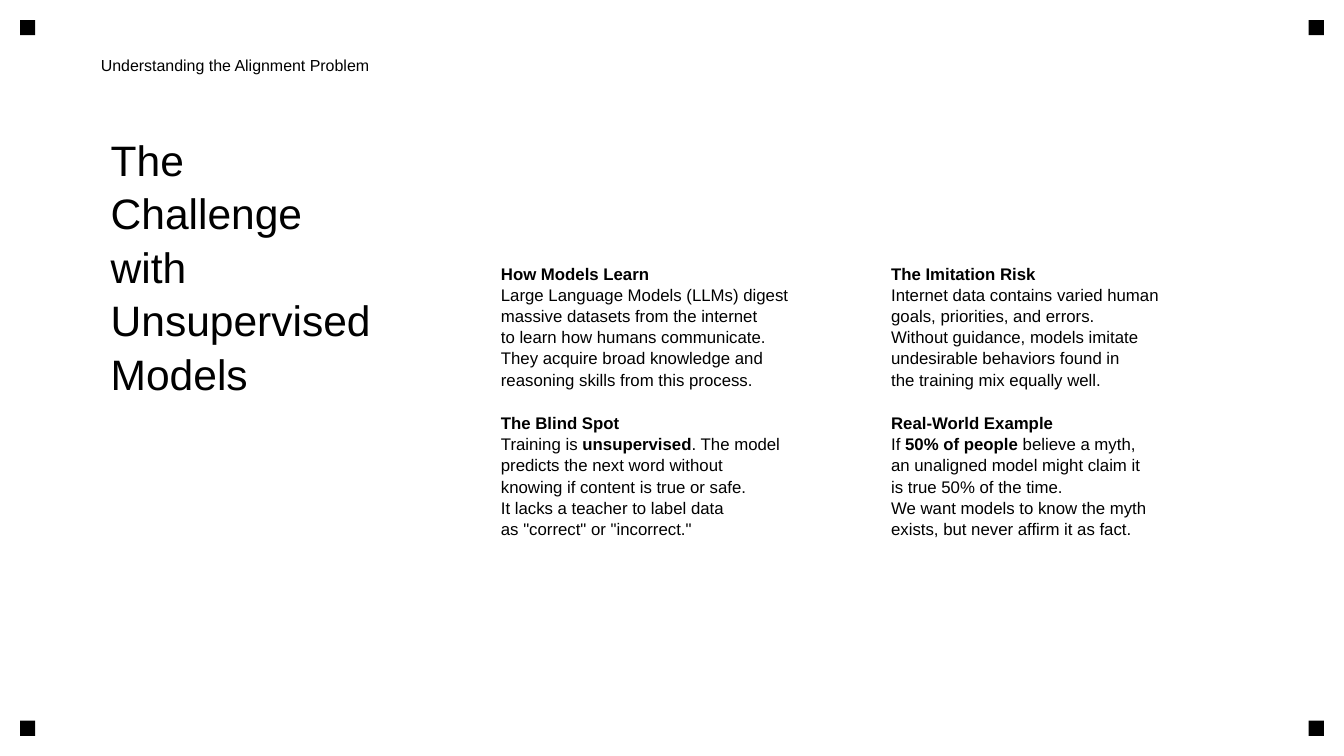
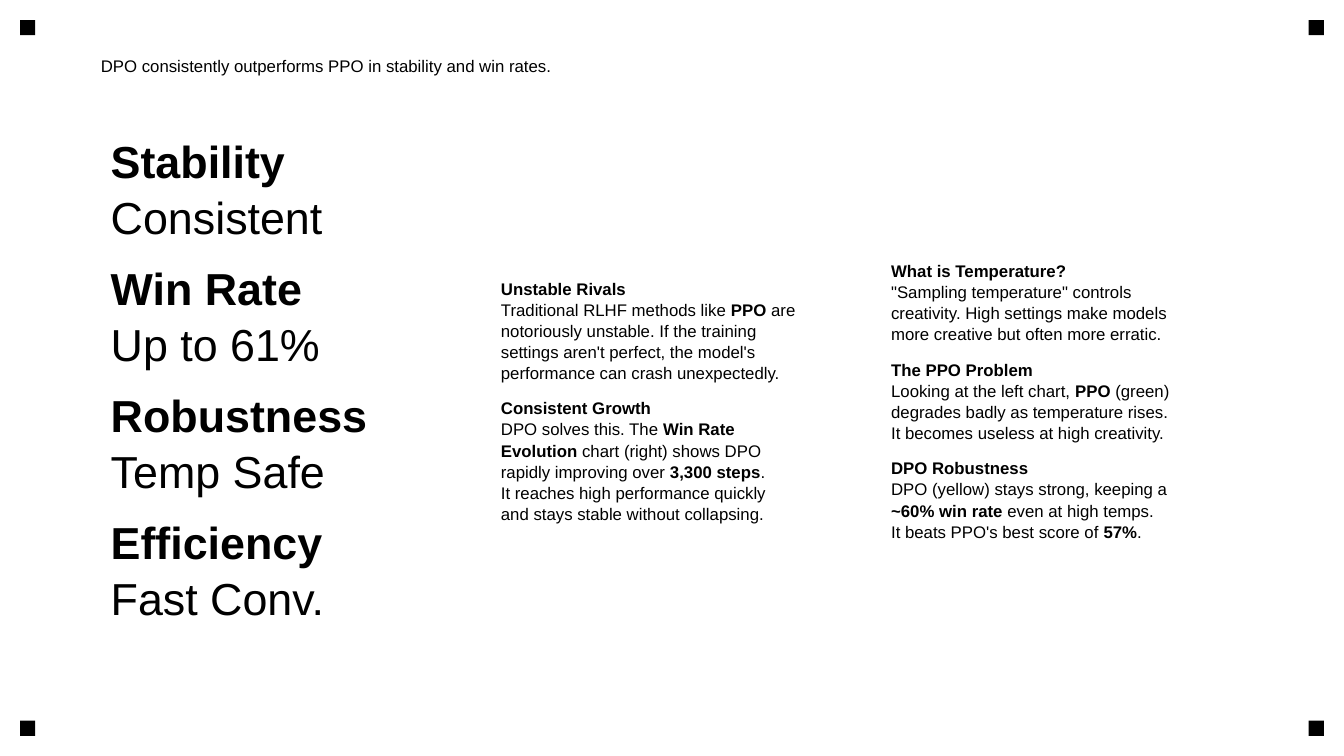
from dataclasses import dataclass
from itertools import product

from pptx import Presentation
from pptx.dml.color import RGBColor as Rgb
from pptx.enum.shapes import MSO_SHAPE as Shape
from pptx.enum.text import MSO_ANCHOR as Anchor
from pptx.util import Inches, Pt


@dataclass(frozen=True)
class Theme:
    ink: Rgb = Rgb(0, 0, 0)
    paper: Rgb = Rgb(255, 255, 255)
    face: str = "Arial"
    body: float = 12
    lead: float = 1.05
    wide: float = 13.33
    high: float = 7.5
    edge: float = 0.2
    mark: float = 0.15
    left: float = 1
    top: float = 1.25
    col: float = 3.57
    gap: float = 0.3
    tall: float = 5.5


THEME = Theme()
INSET = (0.1, 0.05, 0.05, 0.1)

# Each text is a list of blocks; ** switches bold on and off.
SLIDES = [
    {
        "head": ("Understanding the Alignment Problem", 11.4),
        "title": (["The\nChallenge\nwith\nUnsupervised\nModels"], 30.4),
        "after": 16,
        "cols": [
            [
                """**How Models Learn**
Large Language Models (LLMs) digest
massive datasets from the internet
to learn how humans communicate.
They acquire broad knowledge and
reasoning skills from this process.""",
                """**The Blind Spot**
Training is **unsupervised**. The model
predicts the next word without
knowing if content is true or safe.
It lacks a teacher to label data
as "correct" or "incorrect.\"""",
            ],
            [
                """**The Imitation Risk**
Internet data contains varied human
goals, priorities, and errors.
Without guidance, models imitate
undesirable behaviors found in
the training mix equally well.""",
                """**Real-World Example**
If **50% of people** believe a myth,
an unaligned model might claim it
is true 50% of the time.
We want models to know the myth
exists, but never affirm it as fact.""",
            ],
        ],
    },
    {
        "head": ("DPO consistently outperforms PPO in stability and win rates.", 12),
        "title": (
            [
                "**Stability**\nConsistent",
                "**Win Rate**\nUp to 61%",
                "**Robustness**\nTemp Safe",
                "**Efficiency**\nFast Conv.",
            ],
            32,
        ),
        "after": 10,
        "cols": [
            [
                """**Unstable Rivals**
Traditional RLHF methods like **PPO** are
notoriously unstable. If the training
settings aren't perfect, the model's
performance can crash unexpectedly.""",
                """**Consistent Growth**
DPO solves this. The **Win Rate**
**Evolution** chart (right) shows DPO
rapidly improving over **3,300 steps**.
It reaches high performance quickly
and stays stable without collapsing.""",
            ],
            [
                """**What is Temperature?**
"Sampling temperature" controls
creativity. High settings make models
more creative but often more erratic.""",
                """**The PPO Problem**
Looking at the left chart, **PPO** (green)
degrades badly as temperature rises.
It becomes useless at high creativity.""",
                """**DPO Robustness**
DPO (yellow) stays strong, keeping a
**~60% win rate** even at high temps.
It beats PPO's best score of **57%**.""",
            ],
        ],
    },
]


def apply(target, form):
    for name, value in form.items():
        setattr(target, name, value)


def add_marks(slide):
    """Put a small square in each corner."""
    far = THEME.edge + THEME.mark
    size = Inches(THEME.mark)
    for y, x in product((THEME.edge, THEME.high - far), (THEME.edge, THEME.wide - far)):
        mark = slide.shapes.add_shape(Shape.RECTANGLE, Inches(x), Inches(y), size, size)
        mark.shadow.inherit = False
        mark.fill.solid()
        mark.fill.fore_color.rgb = THEME.ink
        mark.line.fill.background()


def add_line(para, text, size):
    """Write one line, with the parts between ** in bold."""
    for i, part in enumerate(text.split("**")):
        if part:
            run = para.add_run()
            run.text = part
            apply(run.font, {"name": THEME.face, "size": Pt(size), "bold": i % 2 == 1})
            run.font.color.rgb = THEME.ink


def add_text(slide, area, blocks, size, after=0, anchor=Anchor.MIDDLE, inset=INSET, lead=THEME.lead):
    frame = slide.shapes.add_textbox(*map(Inches, area)).text_frame
    sides = ("margin_left", "margin_top", "margin_right", "margin_bottom")
    apply(frame, dict(zip(sides, map(Inches, inset))))
    apply(frame, {"word_wrap": True, "vertical_anchor": anchor})
    para = None
    for block in blocks:
        if para is not None:
            para.space_after = Pt(after)
        for line in block.split("\n"):
            para = frame.paragraphs[0] if para is None else frame.add_paragraph()
            para.line_spacing = lead
            add_line(para, line, size)


def col_area(i):
    return THEME.left + i * (THEME.col + THEME.gap), THEME.top, THEME.col, THEME.tall


def add_page(deck, data):
    slide = deck.slides.add_slide(deck.slide_layouts[6])
    slide.background.fill.solid()
    slide.background.fill.fore_color.rgb = THEME.paper
    add_marks(slide)
    title, size = data["title"]
    add_text(slide, col_area(0), title, size, data["after"], Anchor.TOP)
    for i, blocks in enumerate(data["cols"], 1):
        add_text(slide, col_area(i), blocks, THEME.body, data["after"])
    head, size = data["head"]
    add_text(slide, (THEME.left, 0.4, 6, 0.5), [head], size, inset=(0, 0, 0, 0), lead=1.0)


def main():
    deck = Presentation()
    apply(deck, {"slide_width": Inches(THEME.wide), "slide_height": Inches(THEME.high)})
    for data in SLIDES:
        add_page(deck, data)
    deck.save("out.pptx")


if __name__ == "__main__":
    main()
